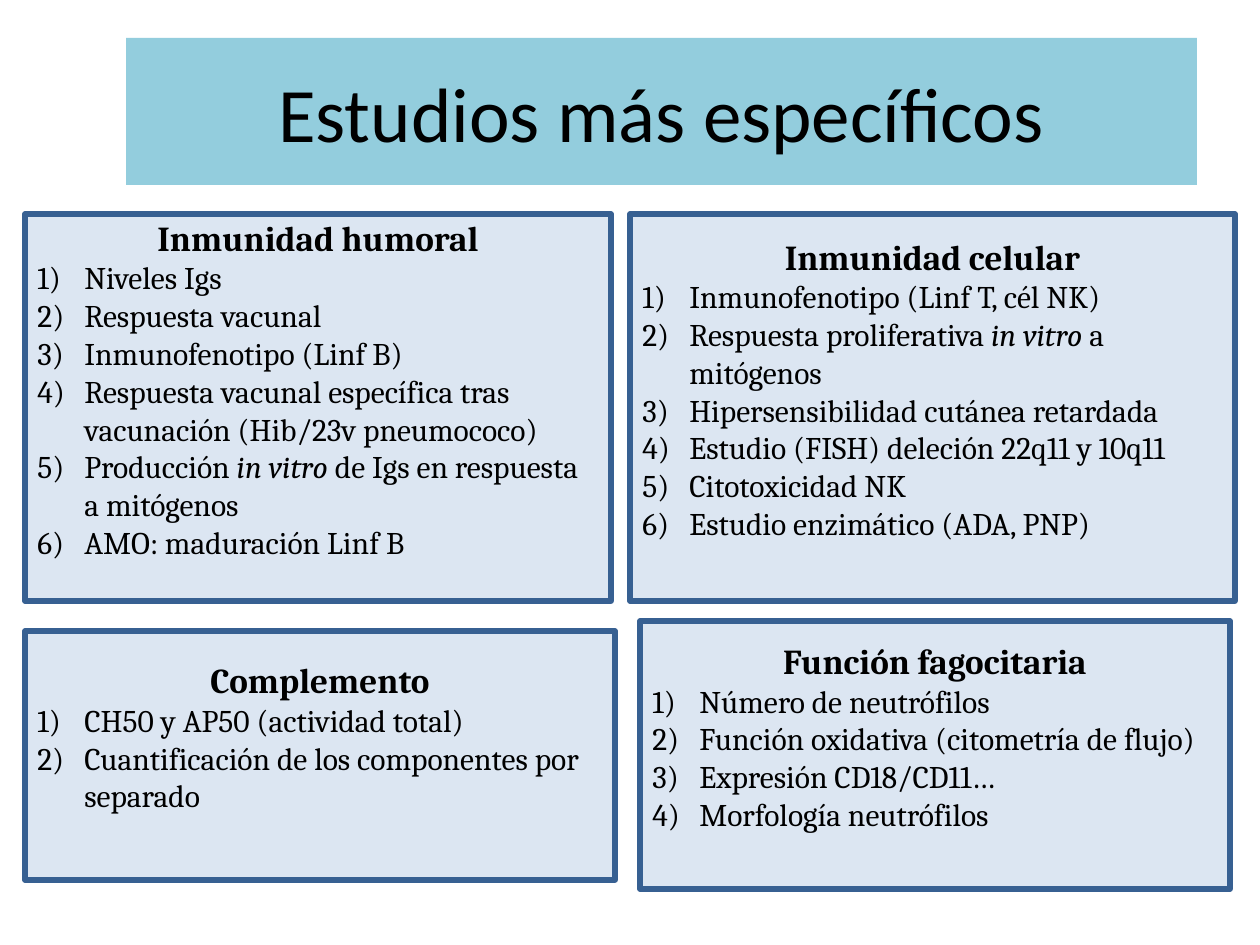
from lxml.etree import SubElement
from pptx import Presentation
from pptx.dml.color import RGBColor
from pptx.enum.shapes import MSO_SHAPE
from pptx.enum.text import MSO_ANCHOR, PP_ALIGN
from pptx.oxml.ns import qn
from pptx.util import Emu, Pt

HUES = {"band": "93CDDD", "panel": "DCE6F2", "edge": "376092", "ink": "000000"}


def px(num):
    return Emu(round(num * 914400 / 126))


def hue(name):
    return RGBColor.from_string(HUES[name])


def write(par, text, font="Cambria", size=18, bold=False, align=PP_ALIGN.LEFT):
    par.alignment = align
    for spot, part in enumerate(text.split("*")):
        run = par.add_run()
        run.text = part
        run.font.name = font
        run.font.size = Pt(size)
        run.font.bold = bold
        run.font.italic = spot % 2 == 1
        run.font.color.rgb = hue("ink")


class Deck:
    def __init__(self):
        self.show = Presentation()
        self.show.slide_width = px(1260)
        self.show.slide_height = px(945)
        self.slide = self.show.slides.add_slide(self.show.slide_layouts[5])

    def title(self, text, left, top, width, height):
        head = self.slide.shapes.title
        head.left, head.top = px(left), px(top)
        head.width, head.height = px(width), px(height)
        head.fill.solid()
        head.fill.fore_color.rgb = hue("band")
        head.text_frame.vertical_anchor = MSO_ANCHOR.MIDDLE
        write(head.text_frame.paragraphs[0], text,
              font="Calibri", size=44, align=PP_ALIGN.CENTER)

    def panel(self, name, items, left, top, width, height):
        box = self.slide.shapes.add_shape(
            MSO_SHAPE.RECTANGLE, px(left), px(top), px(width), px(height))
        box.shadow.inherit = False
        box.fill.solid()
        box.fill.fore_color.rgb = hue("panel")
        box.line.color.rgb = hue("edge")
        box.line.width = Pt(3)
        frame = box.text_frame
        frame.word_wrap = True
        frame.vertical_anchor = MSO_ANCHOR.MIDDLE
        frame.margin_bottom = px(44)
        write(frame.paragraphs[0], name, size=20, bold=True, align=PP_ALIGN.CENTER)
        for item in items:
            self.point(frame, item)

    def point(self, frame, text):
        par = frame.add_paragraph()
        write(par, text)
        props = par._p.get_or_add_pPr()
        props.set("marL", str(px(47)))
        props.set("indent", str(-px(47)))
        SubElement(props, qn("a:buFont"), typeface="+mj-lt")
        SubElement(props, qn("a:buAutoNum"), type="arabicParenR")

    def save(self):
        self.show.save("out.pptx")


def main():
    deck = Deck()
    deck.title("Estudios más específicos", 126, 38, 1071, 147)
    deck.panel("Inmunidad humoral", [
        "Niveles Igs",
        "Respuesta vacunal",
        "Inmunofenotipo (Linf B)",
        "Respuesta vacunal específica tras vacunación (Hib/23v pneumococo)",
        "Producción *in vitro *de Igs en respuesta a mitógenos",
        "AMO: maduración Linf B",
    ], 25, 214, 586, 387)
    deck.panel("Inmunidad celular", [
        "Inmunofenotipo (Linf T, cél NK)",
        "Respuesta proliferativa *in vitro *a mitógenos",
        "Hipersensibilidad cutánea retardada",
        "Estudio (FISH) deleción 22q11 y 10q11",
        "Citotoxicidad NK",
        "Estudio enzimático (ADA, PNP)",
    ], 630, 214, 605, 387)
    deck.panel("Función fagocitaria", [
        "Número de neutrófilos",
        "Función oxidativa (citometría de flujo)",
        "Expresión CD18/CD11…",
        "Morfología neutrófilos",
    ], 640, 621, 590, 268)
    deck.panel("Complemento", [
        "CH50 y AP50 (actividad total)",
        "Cuantificación de los componentes por separado",
    ], 25, 631, 590, 249)
    deck.save()


if __name__ == "__main__":
    main()
